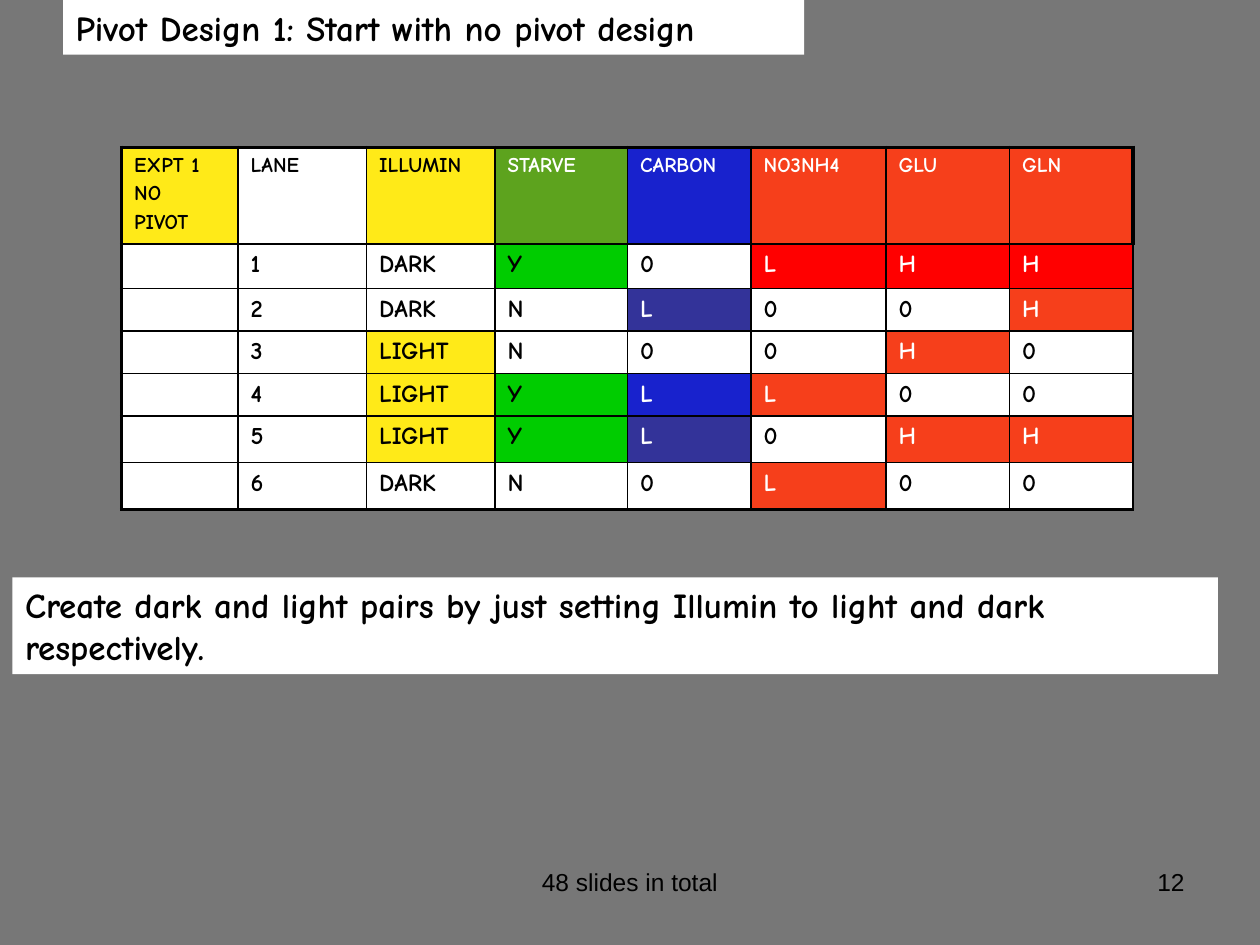
from lxml.etree import SubElement
from pptx import Presentation
from pptx.dml.color import RGBColor
from pptx.enum.text import MSO_ANCHOR, MSO_AUTO_SIZE, PP_ALIGN
from pptx.oxml.ns import qn
from pptx.util import Cm, Pt

BLACK, WHITE, GRAY = "000000", "FFFFFF", "777777"
YELLOW, OLIVE, GREEN = "FFEA18", "5DA31E", "00CC00"
BLUE, INDIGO, ORANGE, RED = "1822CD", "333399", "F63F1B", "FF0000"
DARK_FILLS = {OLIVE, BLUE, INDIGO, ORANGE, RED}

HEADINGS = [
    ("EXPT 1\nNO\nPIVOT", YELLOW), ("LANE", WHITE), ("ILLUMIN", YELLOW), ("STARVE", OLIVE),
    ("CARBON", BLUE), ("NO3NH4", ORANGE), ("GLU", ORANGE), ("GLN", ORANGE),
]
LANES = [
    ("", "1", "DARK", "Y", "0", "L", "H", "H"),
    ("", "2", "DARK", "N", "L", "0", "0", "H"),
    ("", "3", "LIGHT", "N", "0", "0", "H", "0"),
    ("", "4", "LIGHT", "Y", "L", "L", "0", "0"),
    ("", "5", "LIGHT", "Y", "L", "0", "H", "H"),
    ("", "6", "DARK", "N", "0", "L", "0", "0"),
]
LEVEL_FILLS = {"LIGHT": YELLOW, "Y": GREEN}
# (lane, column) cells whose fill differs from their column's heading
SPECIAL_FILLS = {(1, 5): RED, (1, 6): RED, (1, 7): RED, (2, 4): INDIGO, (5, 4): INDIGO}
COLUMN_WIDTHS = [2.35, 2.59, 2.59, 2.67, 2.49, 2.72, 2.49, 2.49]
ROW_HEIGHTS = [1.95, 0.9, 0.85, 0.85, 0.85, 0.94, 0.94]


def rgb(color):
    return RGBColor.from_string(color)


def paint(target, color):
    target.fill.solid()
    target.fill.fore_color.rgb = rgb(color)


def write(frame, text, size=14, font="Comic Neue", color=BLACK, bold=True,
          align=PP_ALIGN.LEFT, gap=0):
    """Fill a text frame, one paragraph per line; gap is a share of the size."""
    for index, line in enumerate(text.split("\n")):
        paragraph = frame.paragraphs[0] if index == 0 else frame.add_paragraph()
        paragraph.alignment = align
        paragraph.space_before = Pt(size * gap if index else 0)
        if not line:
            SubElement(paragraph._p, qn("a:endParaRPr"), sz=str(size * 100))
            continue
        run = paragraph.add_run()
        run.text = line
        run.font.size = Pt(size)
        run.font.name = font
        run.font.bold = bold
        run.font.color.rgb = rgb(color)


def place(shape, box):
    shape.left, shape.top, shape.width, shape.height = (Cm(length) for length in box)


def add_banner(placeholder, box, text):
    place(placeholder, box)
    paint(placeholder, WHITE)
    frame = placeholder.text_frame
    frame.word_wrap = True
    frame.auto_size = MSO_AUTO_SIZE.NONE
    frame.vertical_anchor = MSO_ANCHOR.TOP
    write(frame, text, size=20)
    properties = frame.paragraphs[0]._p.get_or_add_pPr()
    properties.set("marL", "0")
    properties.set("indent", "0")
    SubElement(properties, qn("a:buNone"))


def add_footer(slide, box, text, align):
    footer = slide.shapes.add_textbox(*(Cm(length) for length in box))
    footer.text_frame.word_wrap = True
    write(footer.text_frame, text, font="Arial", bold=False, align=align)


def set_borders(cell, **widths):
    """Draw black borders; this must come before the cell's fill."""
    properties = cell._tc.get_or_add_tcPr()
    for side in ("L", "R", "T", "B"):
        line = SubElement(properties, qn(f"a:ln{side}"), w=str(Pt(widths[side])))
        solid = SubElement(line, qn("a:solidFill"))
        SubElement(solid, qn("a:srgbClr"), val=BLACK)


def lane_fill(lane, column, level):
    if (lane, column) in SPECIAL_FILLS:
        return SPECIAL_FILLS[lane, column]
    if column >= 4 and level != "0":
        return HEADINGS[column][1]
    return LEVEL_FILLS.get(level, WHITE)


def add_design_table(slide, left, top):
    rows = [HEADINGS] + [
        [(level, lane_fill(lane, column, level)) for column, level in enumerate(levels)]
        for lane, levels in enumerate(LANES, start=1)
    ]
    table = slide.shapes.add_table(
        len(rows), len(HEADINGS), Cm(left), Cm(top),
        Cm(sum(COLUMN_WIDTHS)), Cm(sum(ROW_HEIGHTS))).table
    for column, width in zip(table.columns, COLUMN_WIDTHS):
        column.width = Cm(width)
    for row, height in zip(table.rows, ROW_HEIGHTS):
        row.height = Cm(height)

    thin, thick = 1, 2.25
    last_row, last_column = len(rows) - 1, len(HEADINGS) - 1
    for r, levels in enumerate(rows):
        for c, (level, fill) in enumerate(levels):
            cell = table.cell(r, c)
            set_borders(
                cell,
                L=thick if c == 0 else thin,
                R=thick if (r, c) == (0, last_column) else thin,
                T=thick if r == 0 else thin,
                B=thick if r == last_row else thin)
            paint(cell, fill)
            write(cell.text_frame, level, size=14 if r else 12, gap=0.2,
                  color=WHITE if fill in DARK_FILLS else BLACK)


def main():
    presentation = Presentation()
    presentation.slide_width, presentation.slide_height = Cm(25.4), Cm(19.05)
    slide = presentation.slides.add_slide(presentation.slide_layouts[1])
    paint(slide.background, GRAY)

    add_design_table(slide, 2.45, 2.97)
    title, caption = slide.placeholders
    add_banner(title, (1.27, 0, 14.94, 1.1), "Pivot Design 1: Start with no pivot design")
    add_banner(caption, (0.25, 11.64, 24.3, 1.95),
               "Create dark and light pairs by just setting Illumin to light and dark "
               "respectively.")
    add_footer(slide, (8.68, 17.35, 8.04, 1.32), "48 slides in total", PP_ALIGN.CENTER)
    add_footer(slide, (18.2, 17.35, 5.93, 1.32), "12", PP_ALIGN.RIGHT)
    presentation.save("out.pptx")


if __name__ == "__main__":
    main()
